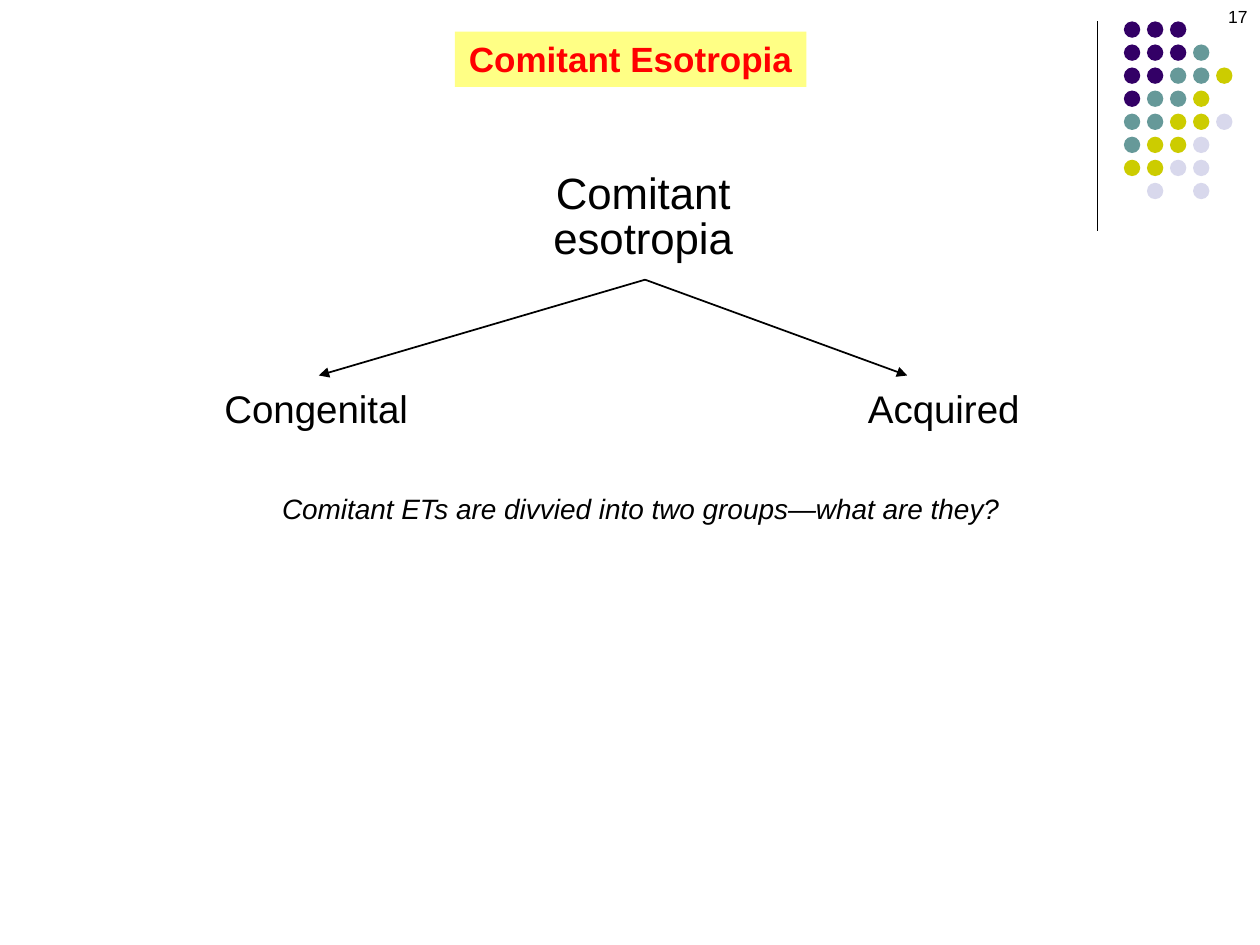
"""Build the Comitant Esotropia slide: a two-way classification tree with a dot motif."""
from lxml.etree import SubElement
from pptx import Presentation
from pptx.dml.color import RGBColor
from pptx.enum.shapes import MSO_CONNECTOR, MSO_SHAPE
from pptx.enum.text import MSO_ANCHOR, PP_ALIGN
from pptx.oxml.ns import qn
from pptx.util import Inches, Pt

color = RGBColor.from_string


def write(box, text, size, align, ink="000000", bold=False, italic=False, spacing=None):
    frame = box.text_frame
    frame.text = text
    frame.word_wrap = False
    frame.vertical_anchor = MSO_ANCHOR.TOP
    for paragraph in frame.paragraphs:
        paragraph.alignment = align
        paragraph.line_spacing = spacing
        for span in paragraph.runs:
            span.font.name = "Arial"
            span.font.size = Pt(size)
            span.font.bold = bold
            span.font.italic = italic
            span.font.color.rgb = color(ink)


def draw_line(page, start, end, width, arrow=False):
    points = [Inches(value) for value in (*start, *end)]
    line = page.shapes.add_connector(MSO_CONNECTOR.STRAIGHT, *points)
    line.line.color.rgb = color("000000")
    line.line.width = Pt(width)
    if arrow:
        SubElement(line.line._get_or_add_ln(), qn("a:tailEnd"), type="triangle")
    SubElement(line._element.spPr, qn("a:effectLst"))


deck = Presentation()
deck.slide_width, deck.slide_height = Inches(10), Inches(7.5)
page = deck.slides.add_slide(deck.slide_layouts[5])

title = page.shapes.title
title.left, title.top = Inches(3.61), Inches(0.25)
title.width, title.height = Inches(2.79), Inches(0.44)
title.fill.solid()
title.fill.fore_color.rgb = color("FFFF85")
write(title, "Comitant Esotropia", 20, PP_ALIGN.CENTER, ink="FF0000", bold=True)

draw_line(page, (8.71, 0.17), (8.71, 1.83), 0.75)
dot_colors = {"P": "330066", "T": "669999", "Y": "CCCC00", "L": "D8D8EC"}
dot_rows = ["PPP", "PPPT", "PPTTY", "PTTY", "TTYYL", "TYYL", "YYLL", " L L"]
pitch = 0.183
for row, letters in enumerate(dot_rows):
    for column, letter in enumerate(letters):
        if letter in dot_colors:
            dot = page.shapes.add_shape(
                MSO_SHAPE.OVAL,
                Inches(8.92 + column * pitch), Inches(0.17 + row * pitch),
                Inches(0.13), Inches(0.13))
            dot.shadow.inherit = False
            dot.fill.solid()
            dot.fill.fore_color.rgb = color(dot_colors[letter])
            dot.line.fill.background()

for target in [(2.53, 2.98), (7.2, 2.98)]:
    draw_line(page, (5.12, 2.22), target, 1, arrow=True)

labels = [
    ((4.29, 1.33, 1.63, 0.81), "Comitant\nesotropia", 25, PP_ALIGN.CENTER, {"spacing": 0.85}),
    ((7.67, 0, 2.33, 0.5), "17", 10, PP_ALIGN.RIGHT, {}),
    ((1.67, 3.01, 1.68, 0.47), "Congenital", 22, PP_ALIGN.CENTER, {}),
    ((6.78, 3.01, 1.42, 0.47), "Acquired", 22, PP_ALIGN.CENTER, {}),
    ((2.14, 3.85, 5.97, 0.37), "Comitant ETs are divvied into two groups—what are they?",
     16, PP_ALIGN.LEFT, {"italic": True}),
]
for place, text, size, align, style in labels:
    box = page.shapes.add_textbox(*[Inches(value) for value in place])
    write(box, text, size, align, **style)
    box.text_frame.word_wrap = text == "17"

deck.save("out.pptx")
